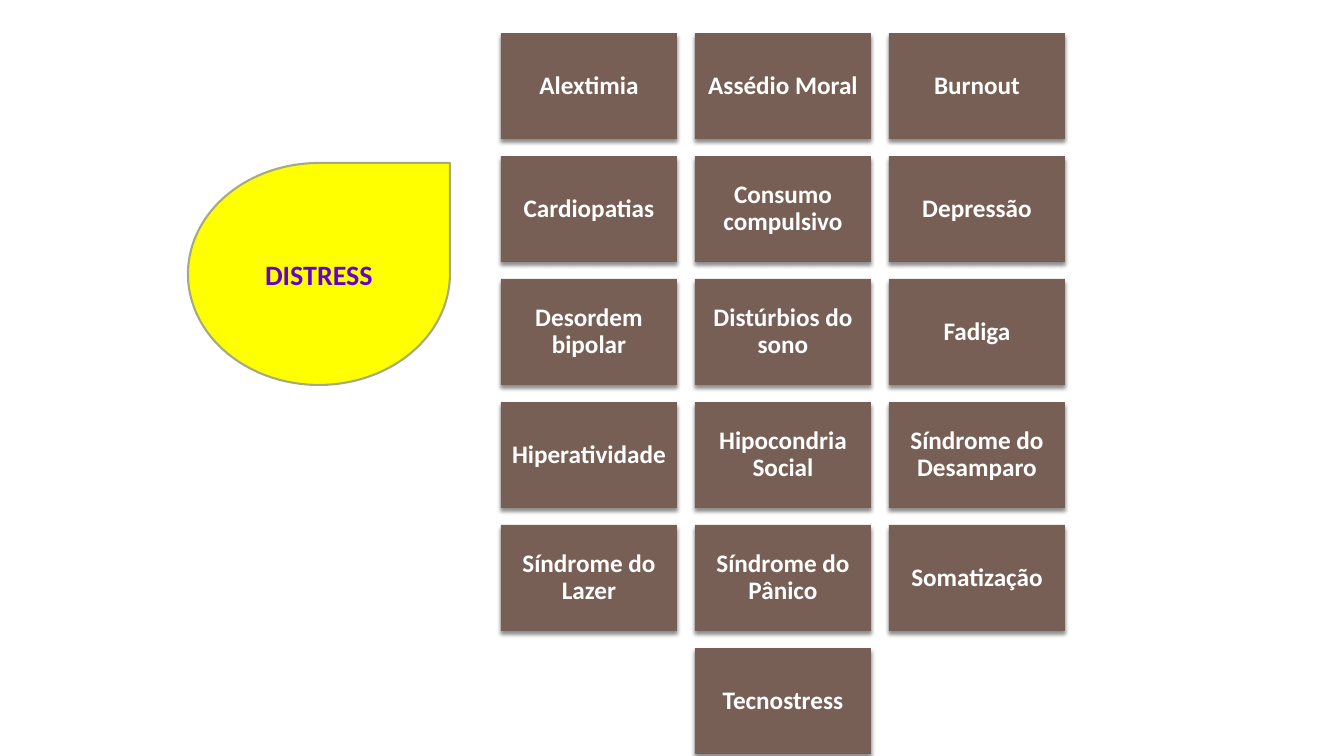
from dataclasses import dataclass

from lxml import etree
from pptx import Presentation
from pptx.dml.color import RGBColor
from pptx.enum.shapes import MSO_SHAPE
from pptx.enum.text import MSO_ANCHOR, PP_ALIGN
from pptx.oxml.ns import qn
from pptx.util import Emu, Pt

RECTANGLE = MSO_SHAPE.RECTANGLE
TEARDROP = MSO_SHAPE.TEAR
MIDDLE = MSO_ANCHOR.MIDDLE
CENTER = PP_ALIGN.CENTER


@dataclass(frozen=True)
class Theme:
    font: str = "Calibri"
    tile: str = "775F55"
    tile_text: str = "FFFFFF"
    drop: str = "FFFF00"
    drop_line: str = "A5AB81"
    drop_text: str = "6600CC"
    shadow: str = "000000"
    tile_size: int = 18
    drop_size: int = 20


theme = Theme()


def px(length):
    return Emu(round(length * 914400 / 100.8))


def add_label(kind, box, text, fill, color, size):
    shape = slide.shapes.add_shape(kind, *(px(length) for length in box))
    shape.shadow.inherit = False
    shape.fill.solid()
    shape.fill.fore_color.rgb = RGBColor.from_string(fill)
    frame = shape.text_frame
    frame.word_wrap = True
    frame.vertical_anchor = MIDDLE
    paragraph = frame.paragraphs[0]
    paragraph.text = text
    paragraph.alignment = CENTER
    paragraph.font.name = theme.font
    paragraph.font.size = Pt(size)
    paragraph.font.bold = True
    paragraph.font.color.rgb = RGBColor.from_string(color)
    return shape


prs = Presentation()
prs.slide_width = px(1344)
prs.slide_height = px(756)
slide = prs.slides.add_slide(prs.slide_layouts[6])

GRID_LEFT, GRID_TOP = 501, 33
TILE_WIDTH, TILE_HEIGHT = 176, 106
COLUMN_STEP, ROW_STEP = 194, 123
COLUMNS = 3
TILE_INSET = px(7)

disorder_rows = [
    ["Alextimia", "Assédio Moral", "Burnout"],
    ["Cardiopatias", "Consumo compulsivo", "Depressão"],
    ["Desordem bipolar", "Distúrbios do sono", "Fadiga"],
    ["Hiperatividade", "Hipocondria Social", "Síndrome do Desamparo"],
    ["Síndrome do Lazer", "Síndrome do Pânico", "Somatização"],
    ["Tecnostress"],
]

for row, disorders in enumerate(disorder_rows):
    row_left = GRID_LEFT + (COLUMNS - len(disorders)) * COLUMN_STEP // 2
    for column, disorder in enumerate(disorders):
        box = (row_left + column * COLUMN_STEP, GRID_TOP + row * ROW_STEP, TILE_WIDTH, TILE_HEIGHT)
        tile = add_label(RECTANGLE, box, disorder, theme.tile, theme.tile_text, theme.tile_size)
        tile.line.fill.background()
        frame = tile.text_frame
        frame.margin_left = frame.margin_right = TILE_INSET
        frame.margin_top = frame.margin_bottom = TILE_INSET
        frame.paragraphs[0].line_spacing = 0.9
        frame.paragraphs[0].space_after = Pt(6.3)

        effects = tile.element.spPr.find(qn("a:effectLst"))
        shadow = etree.SubElement(
            effects, qn("a:outerShdw"),
            blurRad=str(Pt(3)), dist=str(Pt(2.4)), dir="5400000", rotWithShape="0",
        )
        shade = etree.SubElement(shadow, qn("a:srgbClr"), val=theme.shadow)
        etree.SubElement(shade, qn("a:alpha"), val="45000")

distress = add_label(
    TEARDROP, (188, 163, 262, 222), "DISTRESS", theme.drop, theme.drop_text, theme.drop_size
)
distress.line.color.rgb = RGBColor.from_string(theme.drop_line)
distress.line.width = Pt(1.5)

prs.save("out.pptx")
